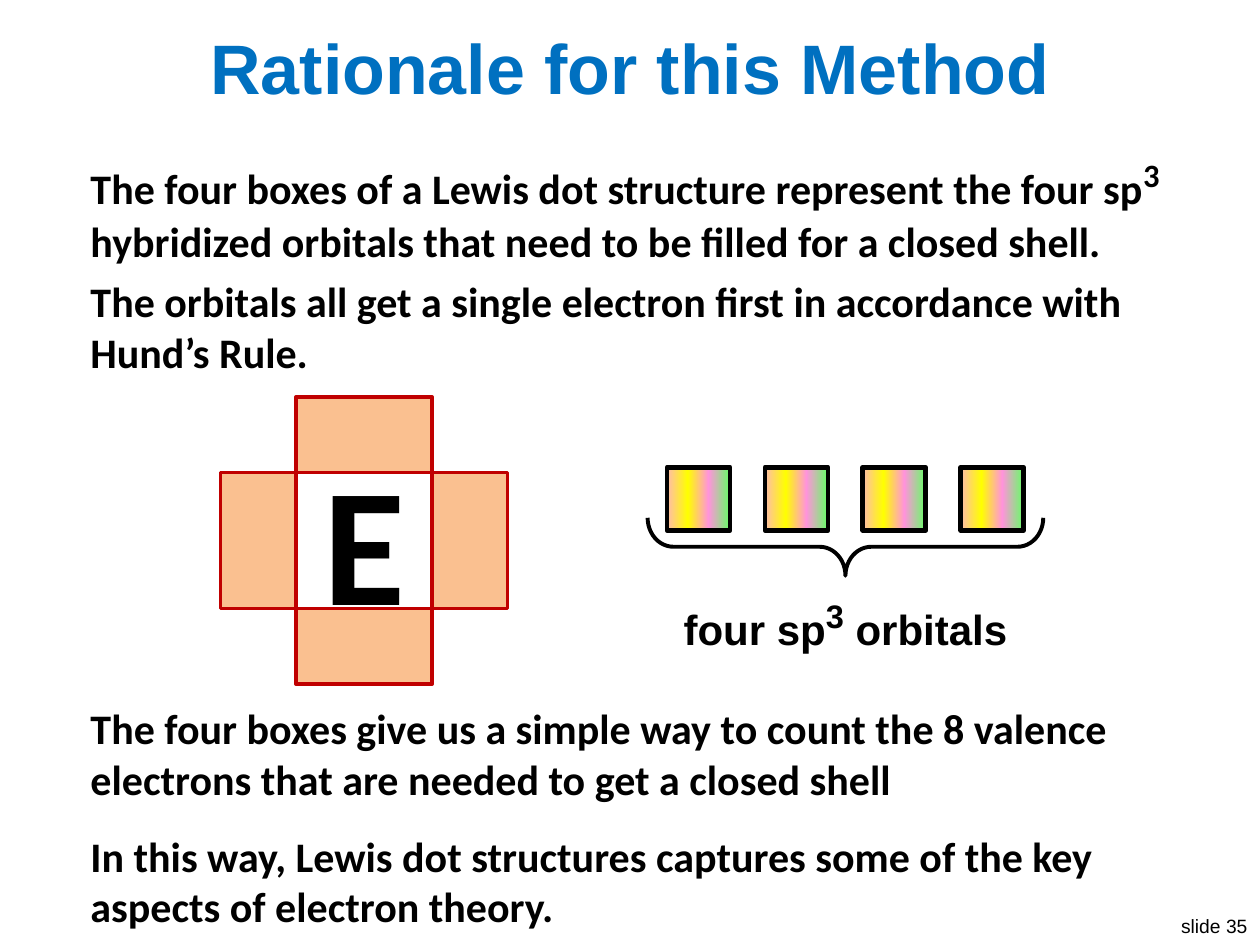
from lxml import etree
from pptx import Presentation
from pptx.dml.color import RGBColor
from pptx.enum.shapes import MSO_SHAPE
from pptx.enum.text import MSO_ANCHOR, MSO_AUTO_SIZE, PP_ALIGN
from pptx.oxml.ns import qn
from pptx.util import Inches, Pt

RECT, BRACE = MSO_SHAPE.RECTANGLE, MSO_SHAPE.RIGHT_BRACE
LEFT, CENTER, RIGHT = PP_ALIGN.LEFT, PP_ALIGN.CENTER, PP_ALIGN.RIGHT
TOP, MIDDLE = MSO_ANCHOR.TOP, MSO_ANCHOR.MIDDLE
GROW = MSO_AUTO_SIZE.SHAPE_TO_FIT_TEXT

# The slide is a grid of 100 columns by 75 rows of square cells.
COLUMNS, ROWS = 100, 75
CELL = Inches(0.1)

BLACK, BLUE, RED, PEACH = "000000", "0070C0", "C00000", "FAC090"
ORBITAL_STOPS = [(0, "FFBBAB"), (33, "FFFF00"), (66, "FF93DB"), (100, "66FF66")]

STATEMENTS = [
    (11.3, [("The four boxes of a Lewis dot structure represent the four sp", 0),
            ("3", 30),
            (" hybridized orbitals that need to be filled for a closed shell.", 0)]),
    (21.4, [("The orbitals all get a single electron first in accordance with "
             "Hund’s Rule.", 0)]),
    (55.3, [("The four boxes give us a simple way to count the 8 valence "
             "electrons that are needed to get a closed shell", 0)]),
    (65.4, [("In this way, Lewis dot structures captures some of the key "
             "aspects of electron theory.", 0)]),
]


def color(value):
    return RGBColor.from_string(value)


def cells(*counts):
    return [round(count * CELL) for count in counts]


def add_text(shapes, box, spans, size=24, font="Calibri", bold=True, ink=BLACK,
             align=LEFT, anchor=TOP, wrap=True, inset=True, raised_size=32):
    """Add a text box; spans is a string or (text, percent raised) pairs."""
    frame = shapes.add_textbox(*cells(*box)).text_frame
    frame.word_wrap, frame.vertical_anchor = wrap, anchor
    frame.auto_size = GROW
    if not inset:
        frame.margin_left = frame.margin_right = 0
        frame.margin_top = frame.margin_bottom = 0
    para = frame.paragraphs[0]
    para.alignment = align
    for text, raised in [(spans, 0)] if isinstance(spans, str) else spans:
        span = para.add_run()
        span.text = text
        span.font.name, span.font.bold = font, bold
        span.font.size = Pt(raised_size if raised else size)
        span.font.color.rgb = color(ink)
        if raised:
            span._r.get_or_add_rPr().set("baseline", str(raised * 1000))


def add_outline(shapes, kind, box, line, width, fill=None):
    shape = shapes.add_shape(kind, *cells(*box))
    shape.shadow.inherit = False
    shape.line.color.rgb, shape.line.width = color(line), Pt(width)
    if fill:
        shape.fill.solid()
        shape.fill.fore_color.rgb = color(fill)
    else:
        shape.fill.background()
    return shape


def fill_gradient(shape, stops):
    shape.fill.gradient()
    shape.fill.gradient_angle = 0
    stop_list = shape._element.spPr.find(qn("a:gradFill")).find(qn("a:gsLst"))
    for old_stop in list(stop_list):
        stop_list.remove(old_stop)
    for percent, value in stops:
        stop = etree.SubElement(stop_list, qn("a:gs"), pos=str(percent * 1000))
        etree.SubElement(stop, qn("a:srgbClr"), val=value)


def add_lewis_boxes(page, left, top, arm, core):
    """Draw four boxes of depth arm around a square of side core."""
    shapes = page.shapes.add_group_shape().shapes
    near, far = arm, arm + core
    for x, y, width, height in [(far, near, arm, core), (near, far, core, arm),
                                (0, near, arm, core), (near, 0, core, arm)]:
        add_outline(shapes, RECT, (left + x, top + y, width, height), RED, 2, PEACH)
    add_outline(shapes, RECT, (left + near, top + near, core, core), RED, 2)
    letter_width, letter_height = 6.6, 16.2
    middle = near + core / 2
    add_text(shapes, (left + middle - letter_width / 2,
                      top + middle - letter_height / 2 - 0.1,
                      letter_width, letter_height),
             "E", size=96, align=CENTER, wrap=False, inset=False)


def add_orbitals(page, left, top, width, count=4, side=5, pitch=7.77):
    """Draw a centred row of orbitals with a brace and a label beneath."""
    shapes = page.shapes.add_group_shape().shapes
    middle = left + width / 2
    first = middle - ((count - 1) * pitch + side) / 2
    for index in range(count):
        orbital = add_outline(shapes, RECT, (first + index * pitch, top, side, side),
                              BLACK, 2.75)
        fill_gradient(orbital, ORBITAL_STOPS)
    depth, brace_middle = 4.6, top + 6.3
    brace = add_outline(shapes, BRACE, (middle - depth / 2, brace_middle - width / 2,
                                        depth, width), BLACK, 2.25)
    brace.rotation = 90
    brace.adjustments[0], brace.adjustments[1] = 0.445, 0.5
    label_width = 28.4
    add_text(shapes, (middle - label_width / 2, top + 9.2, label_width, 5),
             [("four sp", 0), ("3", 30), (" orbitals", 0)],
             font="Arial", align=CENTER, wrap=False)


def add_statements(page, left, width):
    for row, spans in STATEMENTS:
        add_text(page.shapes, (left, row, width, 9.1), spans)


def main():
    deck = Presentation()
    deck.slide_width, deck.slide_height = cells(COLUMNS, ROWS)
    page = deck.slides.add_slide(deck.slide_layouts[6])
    add_text(page.shapes, (92.5, 72.1, 7.5, 2.9), "slide 35", size=11, font="Arial",
             bold=False, align=RIGHT, wrap=False)
    add_text(page.shapes, (2, 1.3, 96, 8), "Rationale for this Method", size=40,
             font="Arial", ink=BLUE, align=CENTER, anchor=MIDDLE)
    add_lewis_boxes(page, left=17.5, top=31.5, arm=6, core=10.8)
    add_orbitals(page, left=51.4, top=37.1, width=31.4)
    add_statements(page, left=6.2, width=87.4)
    deck.save("out.pptx")


if __name__ == "__main__":
    main()
